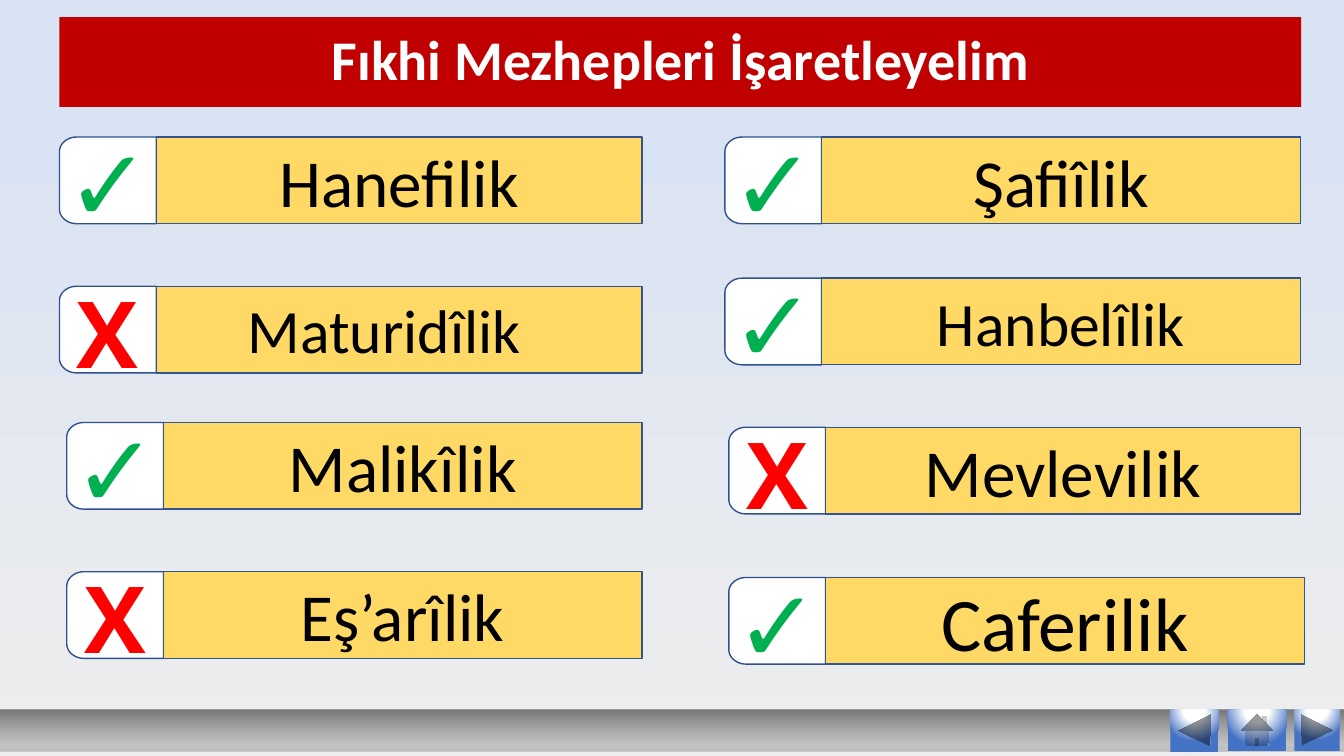
import math
import pptx
import pptx.dml.color
import pptx.enum.shapes
import pptx.enum.text
import pptx.oxml
import pptx.util
from lxml import etree

Pt = pptx.util.Pt
Kind = pptx.enum.shapes.MSO_SHAPE
Align = pptx.enum.text.PP_ALIGN
Anchor = pptx.enum.text.MSO_ANCHOR
Fit = pptx.enum.text.MSO_AUTO_SIZE

BOX_W, BOX_H = 69.12, 61.92
ARC_X, ARC_Y = 12.4, 10.4
CHECK, CROSS = "✓", "X"
ROWS = [
    (42.5, 97.9, 458.6, "Hanefilik", 48, CHECK),
    (42.5, 204.5, 458.6, "", 44, CROSS),
    (47.7, 301.8, 458.6, "Malikîlik", 48, CHECK),
    (47.7, 408.4, 458.6, "Eş’arîlik", 48, CROSS),
    (517.8, 97.9, 928.9, "Şafiîlik", 48, CHECK),
    (517.8, 198.7, 928.9, "Hanbelîlik", 44, CHECK),
    (520.6, 305.2, 928.9, "Mevlevilik", 48, CROSS),
    (520.6, 412.5, 931.7, "Caferilik", 54, CHECK),
]
GLOW = [(0, "FFFFFF", 100), (35, "FFFFFF", 100), (100, "4472C4", 100)]
KEYS = [
    (Kind.ACTION_BUTTON_BACK_OR_PREVIOUS, 835.9, 34.6, 30.2),
    (Kind.ACTION_BUTTON_FORWARD_OR_NEXT, 924.5, 32.4, 29.5),
    (Kind.ACTION_BUTTON_HOME, 877, 41.8, 29.5),
]


def tint(code):
    return pptx.dml.color.RGBColor.from_string(code)


def paint(shape, fill=None, line=None):
    shape.shadow.inherit = False
    if fill:
        shape.fill.solid()
        shape.fill.fore_color.rgb = tint(fill)
    if line:
        shape.line.color.rgb = tint(line)
        shape.line.width = Pt(1)
    else:
        shape.line.fill.background()


def blend(host, fill, stops, round_=False):
    fill.gradient()
    grad = host._element.xpath(".//a:gradFill")[0]
    for child in list(grad):
        grad.remove(child)
    items = "".join(
        f'<a:gs pos="{pos * 1000}"><a:srgbClr val="{code}">'
        f'<a:alpha val="{alpha * 1000}"/></a:srgbClr></a:gs>'
        for pos, code, alpha in stops)
    if round_:
        way = ('<a:path path="circle"><a:fillToRect l="50000" t="-80000" '
               'r="50000" b="180000"/></a:path>')
    else:
        way = '<a:lin ang="16200000" scaled="0"/>'
    space = "http://schemas.openxmlformats.org/drawingml/2006/main"
    root = etree.tostring(pptx.oxml.parse_xml(
        f'<a:gradFill xmlns:a="{space}"><a:gsLst>{items}</a:gsLst>{way}</a:gradFill>'))
    for child in list(pptx.oxml.parse_xml(root)):
        grad.append(child)


def write(shape, text, size, color, font="Calibri", bold=False, align=Align.CENTER):
    para = shape.text_frame.paragraphs[0]
    para.alignment = align
    run = para.add_run()
    run.text = text
    run.font.size = Pt(size)
    run.font.name = font
    run.font.bold = bold
    run.font.color.rgb = tint(color)
    return para


def block(shapes, kind, x, y, w, h, fill=None, line=None):
    shape = shapes.add_shape(kind, Pt(x), Pt(y), Pt(w), Pt(h))
    paint(shape, fill, line)
    shape.text_frame.vertical_anchor = Anchor.MIDDLE
    return shape


def note(shapes, x, y, w, h, wrap, *args, **style):
    box = shapes.add_textbox(Pt(x), Pt(y), Pt(w), Pt(h))
    box.text_frame.word_wrap = wrap
    box.text_frame.auto_size = Fit.SHAPE_TO_FIT_TEXT
    write(box, *args, **style)


def tick_box(shapes, x, y):
    def arc(mid, first):
        angles = [math.radians(first + 9 * i) for i in range(11)]
        return [(Pt(x + ARC_X + ARC_X * math.cos(a)), Pt(mid + ARC_Y * math.sin(a)))
                for a in angles]

    low, right = y + BOX_H, x + BOX_W
    path_pts = [(Pt(right), Pt(low))] + arc(low - ARC_Y, 90) + arc(y + ARC_Y, 180)
    pen = shapes.build_freeform(Pt(right), Pt(y))
    pen.add_line_segments(path_pts, close=True)
    paint(pen.convert_to_shape(), "FFFFFF", "2F528F")


def row(slide, x, y, edge, name, size, mark):
    group = slide.shapes.add_group_shape()
    tick_box(group.shapes, x, y)
    left = x + BOX_W
    label = block(group.shapes, Kind.RECTANGLE, left, y, edge - left, BOX_H,
                  "FFD966", "325491")
    if name:
        write(label, name, size, "000000")
    if mark == CHECK:
        note(slide.shapes, x - 16.6, y - 15.1, 103, 94.3, True,
             mark, 72, "00B050", "TeX Gyre Bonum", True)
    else:
        note(slide.shapes, x + 5, y - 11, 59, 87.1, False,
             mark, 66, "FF0000", "Open Sans", True)


def main():
    deck = pptx.Presentation()
    deck.slide_width, deck.slide_height = Pt(960), Pt(540)
    slide = deck.slides.add_slide(deck.slide_layouts[6])
    blend(slide, slide.background.fill, [(0, "EDEDED", 100), (84, "DAE3F3", 100)])
    title = block(slide.shapes, Kind.RECTANGLE, 42.5, 12.2, 887, 64.1, "C00000")
    para = write(title, "Fıkhi Mezhepleri İşaretleyelim", 40, "FFFFFF", bold=True)
    para.line_spacing = 0.9
    for item in ROWS:
        row(slide, *item)
    bar = block(slide.shapes, Kind.RECTANGLE, 0, 506.9, 960, 30.2)
    blend(bar, bar.fill, [(0, "C0C0C0", 100), (17, "B3B3B3", 70), (100, "777777", 100)])
    for kind, x, w, h in KEYS:
        key = block(slide.shapes, kind, x, 506.9, w, h)
        blend(key, key.fill, GLOW, True)
    note(slide.shapes, 169.9, 205.2, 211.7, 60.5, False,
         "Maturidîlik", 44, "000000", align=Align.LEFT)
    deck.save("out.pptx")


if __name__ == "__main__":
    main()
